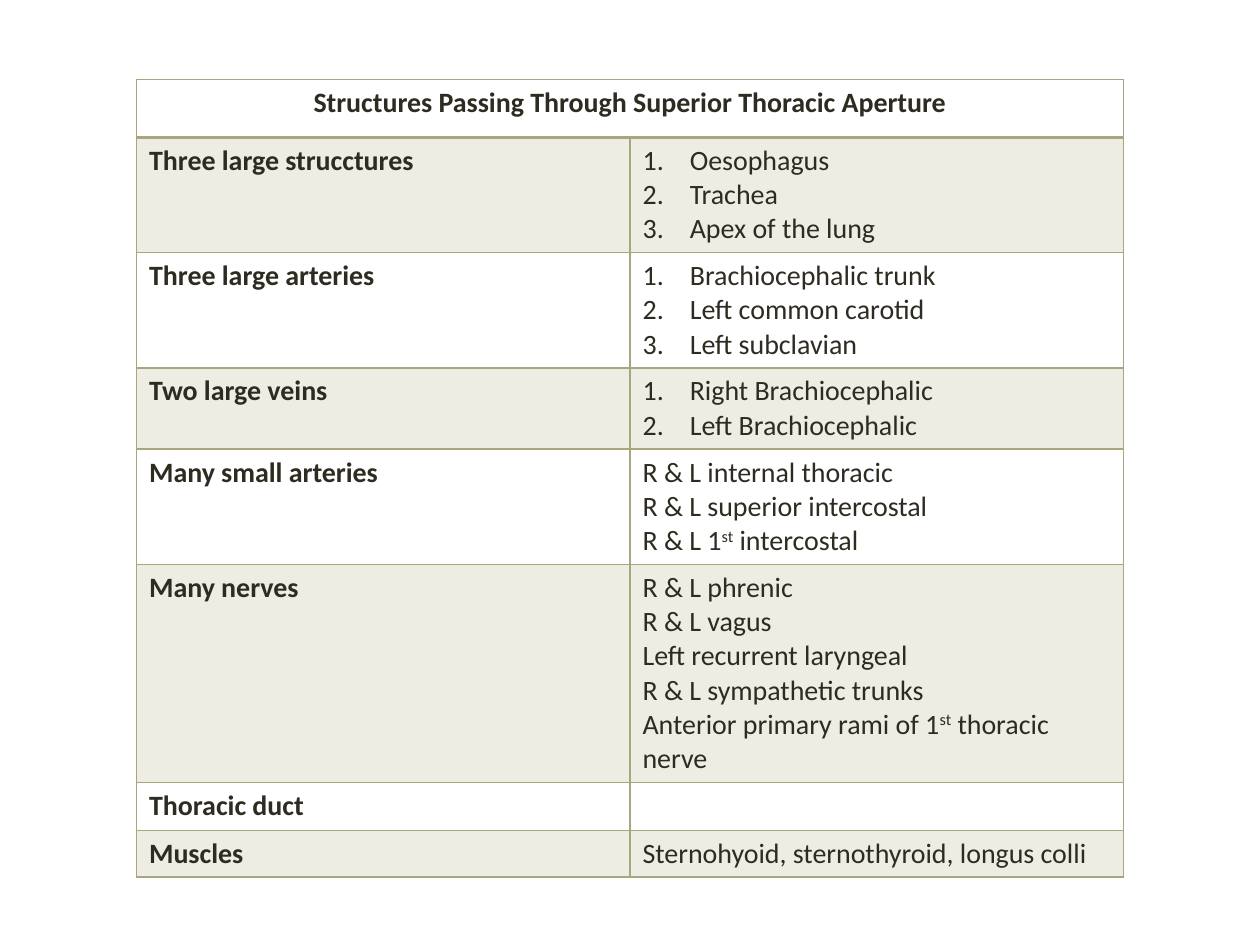
"""Build a slide with a table of structures in the superior thoracic aperture."""
from lxml.etree import SubElement
from pptx import Presentation
from pptx.dml.color import RGBColor
from pptx.enum.text import PP_ALIGN
from pptx.oxml import parse_xml
from pptx.oxml.ns import nsdecls, qn
from pptx.util import Pt

TITLE = "Structures Passing Through Superior Thoracic Aperture"
GROUPS = [
    ("Three large strucctures", True, ["Oesophagus", "Trachea", "Apex of the lung"]),
    ("Three large arteries", True,
     ["Brachiocephalic trunk", "Left common carotid", "Left subclavian"]),
    ("Two large veins", True, ["Right Brachiocephalic", "Left Brachiocephalic"]),
    ("Many small arteries", False,
     ["R & L internal thoracic", "R & L superior intercostal", "R & L 1^st^ intercostal"]),
    ("Many nerves", False,
     ["R & L phrenic", "R & L vagus", "Left recurrent laryngeal",
      "R & L sympathetic trunks", "Anterior primary rami of 1^st^ thoracic nerve"]),
    ("Thoracic duct", False, [""]),
    ("Muscles", False, ["Sternohyoid, sternothyroid, longus colli"]),
]
ROW_HEIGHTS = [33.12, 57.6, 57.6, 43.92, 57.6, 92.16, 26.64, 26.64]
LEFT, TOP, WIDTH, HEIGHT = 78, 45.36, 564, 449.28
INK, OLIVE = "2E2B21", "A9A57C"
INDENT = Pt(27)


def color(code):
    return RGBColor.from_string(code)


def write_cell(cell, lines, bold=False, numbered=False, align=None):
    frame = cell.text_frame
    for index, line in enumerate(lines):
        para = frame.paragraphs[0] if index == 0 else frame.add_paragraph()
        para.alignment = align
        if numbered:
            props = para._p.get_or_add_pPr()
            props.set("marL", str(INDENT))
            props.set("indent", str(-INDENT))
            SubElement(props, qn("a:buFont"), typeface="+mj-lt")
            SubElement(props, qn("a:buAutoNum"), type="arabicPeriod")
        for part, text in enumerate(line.split("^")):
            span = para.add_run()
            span.text = text
            span.font.name = "Calibri"
            span.font.size = Pt(16)
            span.font.bold = bold
            span.font.color.rgb = color(INK)
            if part % 2:
                span.font._element.set("baseline", "30000")


def style_cell(cell, row):
    if row % 2:
        cell.fill.solid()
        cell.fill.fore_color.rgb = color(OLIVE)
        tint = cell._tc.tcPr.find(".//" + qn("a:srgbClr"))
        SubElement(tint, qn("a:alpha"), val="20000")
    else:
        cell.fill.background()
    heavy_side = {0: "B", 1: "T"}.get(row)
    for index, side in enumerate("LRTB"):
        width = Pt(2 if side == heavy_side else 1)
        cell._tc.tcPr.insert(index, parse_xml(
            f'<a:ln{side} {nsdecls("a")} w="{width}"><a:solidFill>'
            f'<a:srgbClr val="{OLIVE}"/></a:solidFill></a:ln{side}>'))


def main():
    deck = Presentation()
    deck.slide_width, deck.slide_height = Pt(720), Pt(540)
    slide = deck.slides.add_slide(deck.slide_layouts[6])
    holder = slide.shapes.add_table(
        len(ROW_HEIGHTS), 2, Pt(LEFT), Pt(TOP), Pt(WIDTH), Pt(HEIGHT))
    table = holder.table
    table.first_row = table.horz_banding = False
    for row, height in enumerate(ROW_HEIGHTS):
        table.rows[row].height = Pt(height)
        for column in range(2):
            style_cell(table.cell(row, column), row)
    holder.height = Pt(HEIGHT)

    table.cell(0, 0).merge(table.cell(0, 1))
    write_cell(table.cell(0, 0), [TITLE], bold=True, align=PP_ALIGN.CENTER)
    for row, (group, numbered, members) in enumerate(GROUPS, 1):
        write_cell(table.cell(row, 0), [group], bold=True)
        write_cell(table.cell(row, 1), members, numbered=numbered)
    deck.save("out.pptx")


if __name__ == "__main__":
    main()
